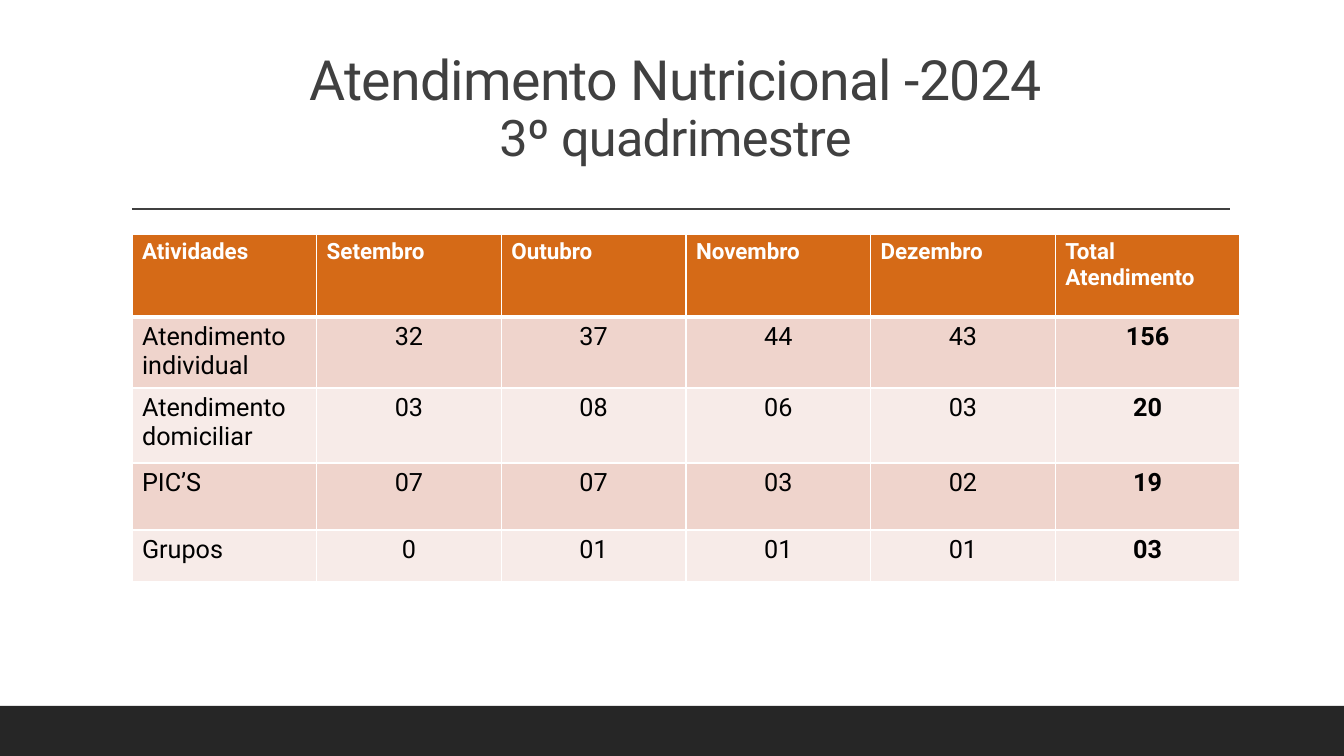
import pptx
import pptx.dml.color
import pptx.enum.shapes
import pptx.enum.text
import pptx.oxml
import pptx.oxml.ns
import pptx.util

# Content
TITLE = [("Atendimento Nutricional -2024", 39.6), ("3º quadrimestre", 36)]
HEADINGS = ["Atividades", "Setembro", "Outubro", "Novembro", "Dezembro", "Total Atendimento"]
SERVICES = [
    ("Atendimento individual", "32", "37", "44", "43", "156"),
    ("Atendimento domiciliar", "03", "08", "06", "03", "20"),
    ("PIC’S", "07", "07", "03", "02", "19"),
    ("Grupos", "0", "01", "01", "01", "03"),
]

# Theme and layout, lengths in px
THEME = {
    "font": "Roboto", "heading_size": 16, "body_size": 18,
    "title": "404040", "footer": "262626", "white": "FFFFFF", "black": "000000",
    "heading": "D56A17", "bands": ("EFD4CC", "F7EBE8"),
}
PAGE_WIDTH, PAGE_HEIGHT = 1344, 756
FOOTER_TOP = 706
TITLE_BOX = (121, 31, 1109, 141)
RULE_LEFT, RULE_RIGHT, RULE_TOP = 132, 1230, 209
TABLE_LEFT, TABLE_TOP, TABLE_WIDTH = 132, 234, 1108
ROW_HEIGHTS = [83, 71, 75, 67, 52]
ALIGN = pptx.enum.text.PP_ALIGN


def px(length):
    return pptx.util.Emu(round(length * 12192000 / PAGE_WIDTH))


def color(name):
    return pptx.dml.color.RGBColor.from_string(name)


def paint(shape, fill):
    shape.fill.solid()
    shape.fill.fore_color.rgb = color(fill)


def write(para, text, size, ink, bold=False, align=ALIGN.LEFT, spacing=None):
    para.alignment = align
    span = para.add_run()
    span.text = text
    span.font.name = THEME["font"]
    span.font.size = pptx.util.Pt(size)
    span.font.bold = bold
    span.font.color.rgb = color(ink)
    if spacing is not None:
        span.font._element.set("spc", str(spacing))


def add_borders(cell, widths):
    properties = cell._tc.get_or_add_tcPr()
    for index, (side, points) in enumerate(widths.items()):
        border = pptx.oxml.parse_xml(
            f'<a:{side} {pptx.oxml.ns.nsdecls("a")} w="{pptx.util.Pt(points)}">'
            f'<a:solidFill><a:srgbClr val="{THEME["white"]}"/></a:solidFill></a:{side}>')
        properties.insert(index, border)


def add_title(page):
    box = page.shapes.add_textbox(*map(px, TITLE_BOX))
    frame = box.text_frame
    frame.word_wrap = True
    frame.vertical_anchor = pptx.enum.text.MSO_ANCHOR.BOTTOM
    para = frame.paragraphs[0]
    para.line_spacing = 0.9
    for index, (text, size) in enumerate(TITLE):
        if index:
            para.add_line_break()
        write(para, text, size, THEME["title"], align=ALIGN.CENTER, spacing=-50)


def add_frame(page):
    footer = page.shapes.add_shape(
        pptx.enum.shapes.MSO_SHAPE.RECTANGLE,
        0, px(FOOTER_TOP), px(PAGE_WIDTH), px(PAGE_HEIGHT - FOOTER_TOP))
    footer.shadow.inherit = False
    paint(footer, THEME["footer"])
    footer.line.fill.background()
    rule = page.shapes.add_connector(
        pptx.enum.shapes.MSO_CONNECTOR.STRAIGHT,
        px(RULE_LEFT), px(RULE_TOP), px(RULE_RIGHT), px(RULE_TOP))
    rule.line.color.rgb = color(THEME["title"])
    rule.line.width = pptx.util.Pt(1)
    rule._element.spPr.append(
        pptx.oxml.parse_xml(f'<a:effectLst {pptx.oxml.ns.nsdecls("a")}/>'))


def add_services(page):
    rows = [HEADINGS, *SERVICES]
    table = page.shapes.add_table(
        len(rows), len(HEADINGS), px(TABLE_LEFT), px(TABLE_TOP),
        px(TABLE_WIDTH), px(sum(ROW_HEIGHTS))).table
    for column in table.columns:
        column.width = px(TABLE_WIDTH / len(HEADINGS))
    for row_index, values in enumerate(rows):
        table.rows[row_index].height = px(ROW_HEIGHTS[row_index])
        heading = row_index == 0
        fill = THEME["heading"] if heading else THEME["bands"][(row_index - 1) % 2]
        for column_index, text in enumerate(values):
            cell = table.cell(row_index, column_index)
            paint(cell, fill)
            add_borders(cell, {"lnL": 1, "lnR": 1,
                               "lnT": 3 if row_index == 1 else 1,
                               "lnB": 3 if heading else 1})
            write(cell.text_frame.paragraphs[0], text,
                  THEME["heading_size" if heading else "body_size"],
                  THEME["white" if heading else "black"],
                  bold=heading or column_index == len(HEADINGS) - 1,
                  align=ALIGN.LEFT if heading or column_index == 0 else ALIGN.CENTER)


def main():
    deck = pptx.Presentation()
    deck.slide_width, deck.slide_height = px(PAGE_WIDTH), px(PAGE_HEIGHT)
    page = deck.slides.add_slide(deck.slide_layouts[6])
    add_frame(page)
    add_title(page)
    add_services(page)
    deck.save("out.pptx")


if __name__ == "__main__":
    main()
